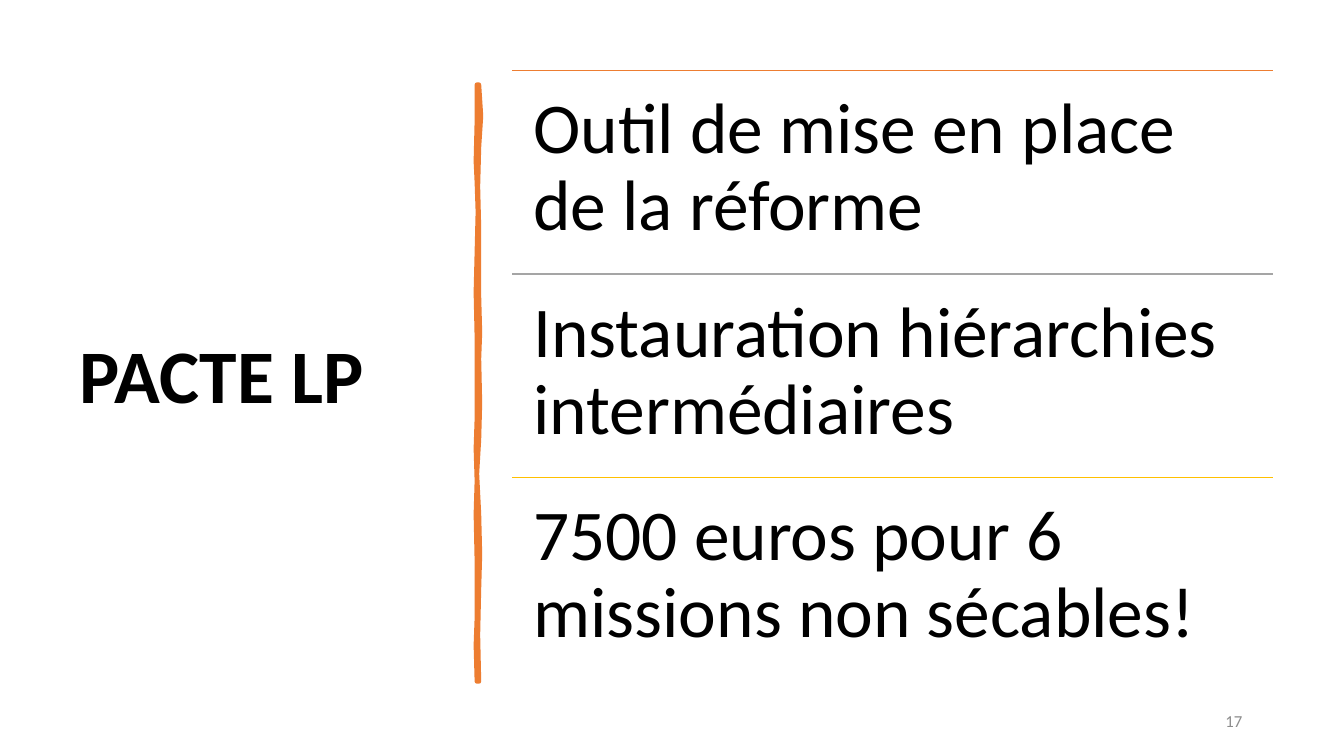
from lxml import etree
from pptx import Presentation
from pptx.dml.color import RGBColor
from pptx.enum.shapes import MSO_CONNECTOR
from pptx.enum.text import MSO_ANCHOR, PP_ALIGN
from pptx.oxml.ns import qn
from pptx.util import Inches, Pt

STRAIGHT = MSO_CONNECTOR.STRAIGHT
TOP, MIDDLE = MSO_ANCHOR.TOP, MSO_ANCHOR.MIDDLE
LEFT, RIGHT = PP_ALIGN.LEFT, PP_ALIGN.RIGHT
FONT = "Calibri"
COLORS = {"black": "000000", "orange": "ED7D31", "grey": "A5A5A5",
          "gold": "FFC000", "number": "8C8C8C"}
LIST_LEFT, LIST_TOP, LIST_WIDTH, ROW_HEIGHT = 5.08, 0.7, 7.55, 2.02
ROWS = [
    ("Outil de mise en place de la réforme", "orange"),
    ("Instauration hiérarchies intermédiaires", "grey"),
    ("7500 euros pour 6 missions non sécables!", "gold"),
]
BRUSH_OUTLINE = [
    (4.75, 0.84), (4.77, 1.15), (4.75, 1.46), (4.74, 1.85), (4.75, 2.26),
    (4.75, 2.94), (4.76, 3.3), (4.75, 3.56), (4.76, 4), (4.75, 4.36),
    (4.73, 4.7), (4.75, 5.1), (4.76, 5.5), (4.75, 5.84), (4.74, 6.3),
    (4.75, 6.76), (4.73, 6.76), (4.72, 6.4), (4.73, 6.13), (4.73, 5.57),
    (4.72, 5.1), (4.73, 4.77), (4.72, 4.45), (4.73, 4.15), (4.73, 3.35),
    (4.72, 2.9), (4.73, 2.5), (4.74, 2.1), (4.73, 1.81), (4.72, 1.6),
    (4.73, 1.2), (4.73, 0.84),
]


def color(name):
    """Return the named colour."""
    return RGBColor.from_string(COLORS[name])


def add_text(page, text, place, size, tint="black", bold=False,
             align=LEFT, anchor=TOP, inset=(0.1, 0.05), spacing=0.9):
    """Add a wrapped text box with one run."""
    box = page.shapes.add_textbox(*(Inches(length) for length in place))
    frame = box.text_frame
    frame.word_wrap = True
    frame.vertical_anchor = anchor
    frame.margin_left = frame.margin_right = Inches(inset[0])
    frame.margin_top = frame.margin_bottom = Inches(inset[1])
    para = frame.paragraphs[0]
    para.alignment = align
    para.line_spacing = spacing
    span = para.add_run()
    span.text = text
    span.font.name = FONT
    span.font.size = Pt(size)
    span.font.bold = bold
    span.font.color.rgb = color(tint)


def add_rule(page, top, tint):
    """Draw a horizontal rule across the list."""
    rule = page.shapes.add_connector(
        STRAIGHT, Inches(LIST_LEFT), Inches(top),
        Inches(LIST_LEFT + LIST_WIDTH), Inches(top))
    rule.line.color.rgb = color(tint)
    rule.line.width = Pt(1)
    etree.SubElement(rule._element.spPr, qn("a:effectLst"))


def add_brush_stroke(page):
    """Draw the hand-drawn vertical divider."""
    points = [(Inches(x), Inches(y)) for x, y in BRUSH_OUTLINE]
    builder = page.shapes.build_freeform(*points[0])
    builder.add_line_segments(points[1:], close=True)
    stroke = builder.convert_to_shape()
    stroke.shadow.inherit = False
    stroke.fill.solid()
    stroke.fill.fore_color.rgb = color("orange")
    stroke.line.color.rgb = color("orange")
    stroke.line.width = Pt(3.25)
    etree.SubElement(stroke._element.spPr.find(qn("a:ln")), qn("a:round"))


def add_list(page):
    """Add the three ruled rows at equal heights."""
    for index, (text, tint) in enumerate(ROWS):
        top = LIST_TOP + index * ROW_HEIGHT
        add_rule(page, top, tint)
        add_text(page, text, (LIST_LEFT, top, LIST_WIDTH, ROW_HEIGHT), 51,
                 inset=(0.21, 0.21))


def main():
    """Build and save the slide."""
    deck = Presentation()
    deck.slide_width, deck.slide_height = Inches(13.33), Inches(7.5)
    page = deck.slides.add_slide(deck.slide_layouts[6])
    add_text(page, "PACTE LP", (0.69, 0.7, 3.74, 6.11), 54,
             bold=True, anchor=MIDDLE)
    add_brush_stroke(page)
    add_text(page, "17", (9.42, 6.95, 3, 0.4), 12, "number",
             align=RIGHT, anchor=MIDDLE, spacing=1.0)
    add_list(page)
    deck.save("out.pptx")


if __name__ == "__main__":
    main()
